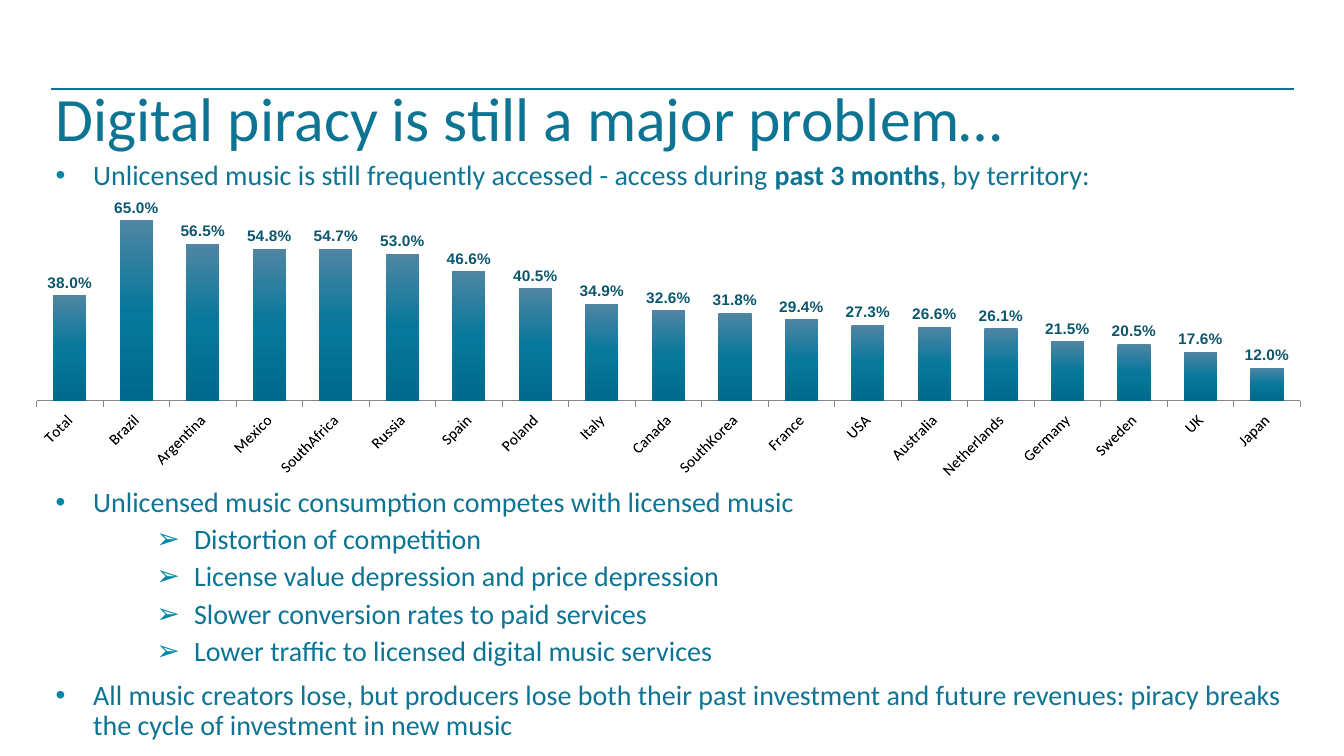
from copy import deepcopy

from lxml.etree import SubElement
from pptx import Presentation
from pptx.chart.data import CategoryChartData
from pptx.dml.color import RGBColor
from pptx.enum.chart import XL_CHART_TYPE, XL_LABEL_POSITION, XL_TICK_MARK
from pptx.enum.shapes import MSO_CONNECTOR
from pptx.enum.text import MSO_ANCHOR
from pptx.oxml import parse_xml
from pptx.oxml.ns import nsdecls, qn
from pptx.util import Cm, Pt

COLORS = {
    "teal": "0E7493",
    "bullet": "0087A4",
    "label": "0B576E",
    "black": "000000",
    "axis": "868686",
    "bar_top": "4F85A3",
    "bar_middle": "07789B",
    "bar_bottom": "006A8C",
}
FONT = "Calibri"
ACCESS_BY_TERRITORY = {
    "Total": 0.38, "Brazil": 0.65, "Argentina": 0.565, "Mexico": 0.548,
    "SouthAfrica": 0.547, "Russia": 0.53, "Spain": 0.466, "Poland": 0.405,
    "Italy": 0.349, "Canada": 0.326, "SouthKorea": 0.318, "France": 0.294,
    "USA": 0.273, "Australia": 0.266, "Netherlands": 0.261, "Germany": 0.215,
    "Sweden": 0.205, "UK": 0.176, "Japan": 0.12,
}
INTRODUCTION = [
    (0, [("Unlicensed music is still frequently accessed - access during ", False),
         ("past 3 months", True), (", by territory:", False)]),
]
CONSEQUENCES = [
    (0, [("Unlicensed music consumption competes with licensed music", False)]),
    (2, [("Distortion of competition", False)]),
    (2, [("License value depression and price depression", False)]),
    (2, [("Slower conversion rates to paid services", False)]),
    (2, [("Lower traffic to licensed digital music services", False)]),
    (0, [("All music creators lose, but producers lose both their past investment and "
          "future revenues: piracy breaks the cycle of investment in new music", False)]),
]


def color(name):
    """Return a named colour."""
    return RGBColor.from_string(COLORS[name])


def style_font(font, size, color_name, bold=False, name=FONT):
    """Set the face, size, weight and colour of a font."""
    font.name = name
    font.size = Pt(size)
    font.bold = bold
    font.color.rgb = color(color_name)


def add_text_frame(slide, left, top, width, height):
    """Add a wrapping, top-anchored text box and return its frame."""
    frame = slide.shapes.add_textbox(left, top, width, height).text_frame
    frame.word_wrap = True
    frame.vertical_anchor = MSO_ANCHOR.TOP
    return frame


def add_title(slide, left, top, width, height):
    """Add the headline with the rule above it."""
    rule_top = top + Cm(0.17)
    rule = slide.shapes.add_connector(
        MSO_CONNECTOR.STRAIGHT, left + Cm(0.14), rule_top, left + width, rule_top)
    rule.line.color.rgb = color("teal")
    rule.line.width = Pt(1.5)
    SubElement(rule._element.spPr, qn("a:effectLst"))
    frame = add_text_frame(slide, left, top, width, height)
    frame.margin_top = Cm(0.15)
    paragraph = frame.paragraphs[0]
    paragraph.line_spacing = 0.9
    run = paragraph.add_run()
    run.text = "Digital piracy is still a major problem…"
    style_font(run.font, 44, "teal")


def set_bullet(paragraph, level):
    """Give a paragraph the indent and bullet of its level."""
    properties = paragraph._p.get_or_add_pPr()
    properties.set("marL", str(Cm(3.49 if level else 0.95)))
    properties.set("indent", str(-Cm(0.95)))
    bullet_color = SubElement(properties, qn("a:buClr"))
    SubElement(bullet_color, qn("a:srgbClr"), val=COLORS["bullet"])
    SubElement(properties, qn("a:buFont"), typeface="Arial")
    SubElement(properties, qn("a:buChar"), char="➢" if level else "•")


def add_bullets(slide, items, left, top, width, height):
    """Add a list of bulleted paragraphs."""
    frame = add_text_frame(slide, left, top, width, height)
    for index, (level, runs) in enumerate(items):
        paragraph = frame.add_paragraph() if index else frame.paragraphs[0]
        paragraph.level = level
        set_bullet(paragraph, level)
        paragraph.line_spacing = 0.9
        if index:
            paragraph.space_before = Pt(5 if level else 10)
        for text, bold in runs:
            run = paragraph.add_run()
            run.text = text
            style_font(run.font, 20, "teal", bold)


def fill_bars(series):
    """Shade the bars from light at the top to dark at the bottom."""
    fill = series.format.fill
    fill.gradient()
    fill.gradient_angle = 270
    first_stop = series._element.find(".//" + qn("a:gs"))
    first_stop.addnext(deepcopy(first_stop))
    names = ("bar_top", "bar_middle", "bar_bottom")
    for index, (stop, name) in enumerate(zip(fill.gradient_stops, names)):
        stop.position = index / 2
        stop.color.rgb = color(name)


def set_plot_layout(chart, left, top, width, height):
    """Fix the inner plot area as fractions of the chart."""
    plot_area = chart._chartSpace.chart.plotArea
    for layout in plot_area.findall(qn("c:layout")):
        plot_area.remove(layout)
    values = "".join(f'<c:{tag} val="{value}"/>' for tag, value in
                     (("x", left), ("y", top), ("w", width), ("h", height)))
    plot_area.insert(0, parse_xml(
        f'<c:layout {nsdecls("c")}><c:manualLayout><c:layoutTarget val="inner"/>'
        f'<c:xMode val="edge"/><c:yMode val="edge"/>{values}</c:manualLayout></c:layout>'))


def add_access_chart(slide, left, top, width, height):
    """Add the column chart of access by territory."""
    data = CategoryChartData(number_format="0.0%")
    data.categories = list(ACCESS_BY_TERRITORY)
    data.add_series("Series 1", list(ACCESS_BY_TERRITORY.values()))
    chart = slide.shapes.add_chart(
        XL_CHART_TYPE.COLUMN_CLUSTERED, left, top, width, height, data).chart
    style_font(chart.font, 18, "black")
    chart.has_title = False
    chart.has_legend = False

    categories = chart.category_axis
    categories.major_tick_mark = XL_TICK_MARK.OUTSIDE
    categories.format.line.color.rgb = color("axis")
    style_font(categories.tick_labels.font, 11, "black")
    categories._element.txPr.find(qn("a:bodyPr")).set("rot", "-2700000")

    values = chart.value_axis
    values.visible = False
    values.has_major_gridlines = False
    values.minimum_scale = 0
    values.maximum_scale = 0.78

    plot = chart.plots[0]
    plot.gap_width = 100
    plot.vary_by_categories = False
    series = plot.series[0]
    series.invert_if_negative = False
    fill_bars(series)
    labels = series.data_labels
    labels.show_value = True
    labels.position = XL_LABEL_POSITION.OUTSIDE_END
    labels.number_format = "0.0%"
    labels.number_format_is_linked = False
    style_font(labels.font, 11, "label", True, "Arial")
    set_plot_layout(chart, 0.01, 0, 0.99, 0.74)


def main():
    """Build the slide and save it."""
    presentation = Presentation()
    presentation.slide_width = Cm(33.87)
    presentation.slide_height = Cm(19.05)
    slide = presentation.slides.add_slide(presentation.slide_layouts[6])
    left, width = Cm(1.15), Cm(31.45)
    add_title(slide, left, Cm(2.08), width, Cm(2.03))
    add_bullets(slide, INTRODUCTION, left, Cm(3.94), width, Cm(1.02))
    add_bullets(slide, CONSEQUENCES, left, Cm(12.18), width, Cm(6.7))
    add_access_chart(slide, Cm(0.6), Cm(4.64), Cm(32.18), Cm(7.44))
    presentation.save("out.pptx")


if __name__ == "__main__":
    main()
